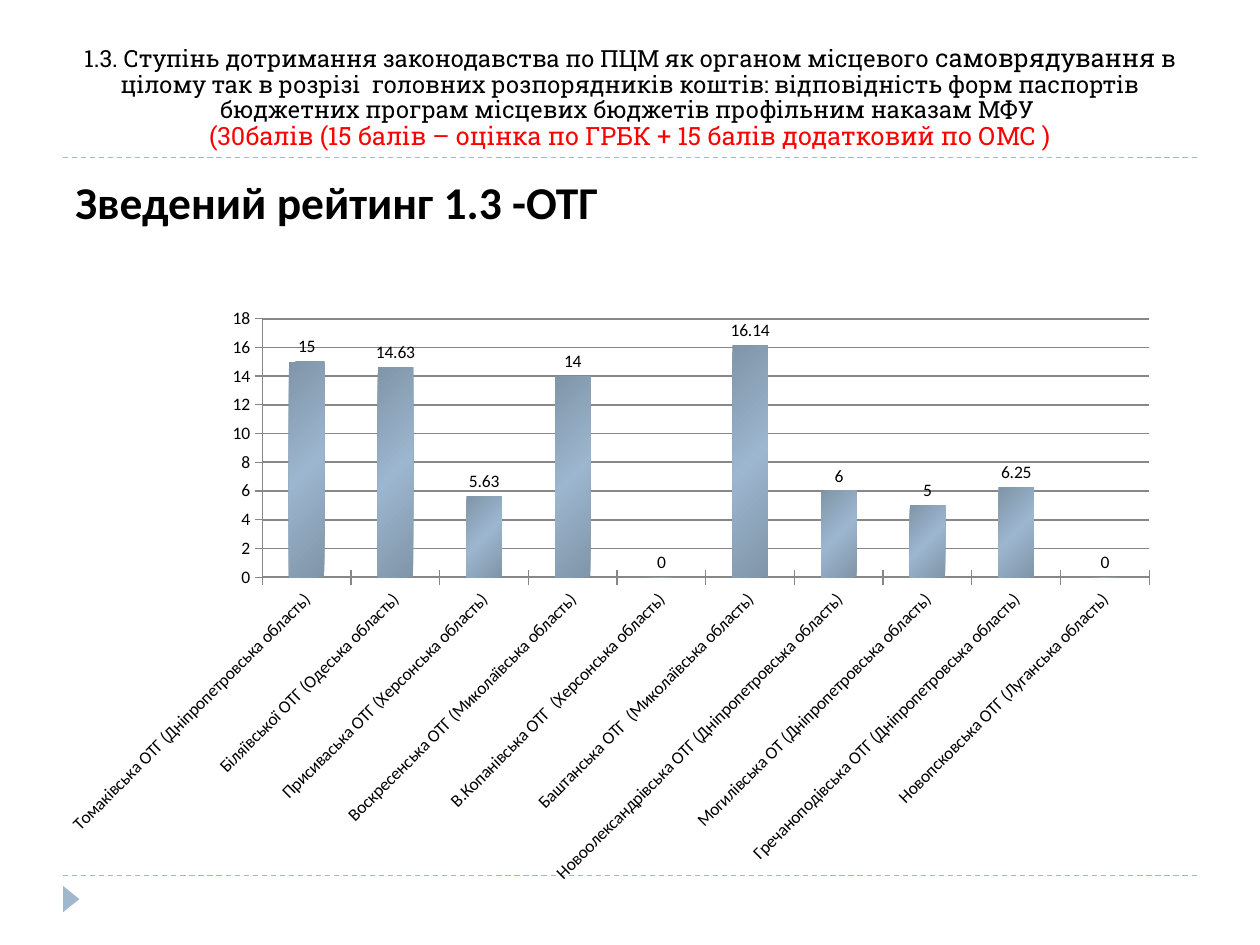
import copy

import lxml.etree
import pptx
import pptx.chart.data
import pptx.dml.color
import pptx.enum.chart
import pptx.enum.dml
import pptx.enum.shapes
import pptx.enum.text
import pptx.oxml
import pptx.oxml.ns
import pptx.util
from pptx.util import Cm

ACCENT, GREY, BLACK, RED = "9FB8CD", "878787", "000000", "FF0000"
BAR_STOPS = [(0, "8095A8"), (0.5, "9CB6CF"), (1, "8095A8")]
TITLE_RUNS = [
    ("1.3. Ступінь дотримання законодавства по ПЦМ як органом місцевого ", 13.5, BLACK),
    ("самоврядування", 14.4, BLACK),
    (" в цілому так в розрізі  головних розпорядників коштів: відповідність форм "
     "паспортів бюджетних програм місцевих бюджетів профільним наказам МФУ ", 13.5, BLACK),
]
TITLE_NOTE = ("(30балів (15 балів – оцінка по ГРБК + 15 балів додатковий по ОМС )", 14.4, RED)
RATINGS = [
    ("Томаківська ОТГ (Дніпропетровська область)", 15),
    ("Біляївської ОТГ (Одеська область)", 14.63),
    (" Присиваська ОТГ (Херсонська область)", 5.63),
    (" Воскресенська ОТГ (Миколаївська область)", 14),
    ("В.Копанівська ОТГ  (Херсонська область)", 0),
    ("Баштанська ОТГ  (Миколаївська область)", 16.14),
    ("Новоолександрівська ОТГ (Дніпропетровська область)", 6),
    ("Могилівська ОТ (Дніпропетровська область)", 5),
    ("Гречаноподівська ОТГ (Дніпропетровська область)", 6.25),
    ("Новопсковська ОТГ (Луганська область)", 0),
]


def color(value):
    """Return the RGB colour for a hex string."""
    return pptx.dml.color.RGBColor.from_string(value)


def format_font(font, name, size, value, bold=False):
    """Set the typeface, size, colour and weight of a font."""
    font.name, font.size, font.bold = name, pptx.util.Pt(size), bold
    font.color.rgb = color(value)


def format_line(line, value, width):
    """Set the colour and width of a line."""
    line.color.rgb = color(value)
    line.width = pptx.util.Pt(width)


def add_run(paragraph, text, name, size, value, bold=False):
    """Add one formatted run to a paragraph."""
    run = paragraph.add_run()
    run.text = text
    format_font(run.font, name, size, value, bold)


def add_rule(slide, top):
    """Add a dashed rule across the slide."""
    rule = slide.shapes.add_connector(
        pptx.enum.shapes.MSO_CONNECTOR.STRAIGHT, Cm(1.27), top, Cm(24.13), top)
    format_line(rule.line, ACCENT, 0.75)
    rule.line.dash_style = pptx.enum.dml.MSO_LINE.DASH
    properties = rule._element.spPr
    lxml.etree.SubElement(properties, pptx.oxml.ns.qn("a:effectLst"))


def add_marker(slide):
    """Add the triangle that points right at the foot."""
    marker = slide.shapes.add_shape(
        pptx.enum.shapes.MSO_SHAPE.ISOSCELES_TRIANGLE, Cm(1.17), Cm(17.96), Cm(0.53), Cm(0.33))
    marker.rotation = 90
    marker.shadow.inherit = False
    marker.fill.solid()
    marker.fill.fore_color.rgb = color(ACCENT)
    marker.line.fill.background()


def set_title(slide):
    """Place and fill the title placeholder."""
    title = slide.shapes.title
    title.left, title.top, title.width, title.height = Cm(1.27), Cm(0.43), Cm(22.86), Cm(2.74)
    frame = title.text_frame
    frame.word_wrap = True
    frame.auto_size = pptx.enum.text.MSO_AUTO_SIZE.NONE
    frame.vertical_anchor = pptx.enum.text.MSO_ANCHOR.BOTTOM
    paragraph = frame.paragraphs[0]
    paragraph.alignment = pptx.enum.text.PP_ALIGN.CENTER
    paragraph.line_spacing = 0.9
    for text, size, value in TITLE_RUNS:
        add_run(paragraph, text, "Roboto Slab", size, value)
    paragraph.add_line_break()
    text, size, value = TITLE_NOTE
    add_run(paragraph, text, "Roboto Slab", size, value)


def add_heading(slide):
    """Add the heading above the chart."""
    box = slide.shapes.add_textbox(Cm(1.27), Cm(3.38), Cm(22.86), Cm(13.72))
    box.text_frame.word_wrap = True
    paragraph = box.text_frame.paragraphs[0]
    paragraph.space_before = pptx.util.Pt(6)
    add_run(paragraph, "Зведений рейтинг 1.3 -ОТГ", "Calibri", 26, BLACK, True)


def fill_bars(series):
    """Give the bars a diagonal gradient with a light middle."""
    fill = series.format.fill
    fill.gradient()
    fill.gradient_angle = 315
    stop_list = series._element.find(".//" + pptx.oxml.ns.qn("a:gsLst"))
    stop_list.insert(1, copy.deepcopy(stop_list[0]))
    for stop, (position, value) in zip(fill.gradient_stops, BAR_STOPS):
        stop.position = position
        stop.color.rgb = color(value)


def set_plot_layout(chart, **fractions):
    """Fix the inner plot area as fractions of the chart."""
    entries = "".join(f'<c:{key}Mode val="edge"/>' for key in "xy")
    entries += "".join(f'<c:{key} val="{value}"/>' for key, value in fractions.items())
    layout = pptx.oxml.parse_xml(
        f'<c:layout {pptx.oxml.ns.nsdecls("c")}><c:manualLayout>'
        f'<c:layoutTarget val="inner"/>{entries}</c:manualLayout></c:layout>')
    plot_area = chart._chartSpace.chart.plotArea
    for old in plot_area.findall(pptx.oxml.ns.qn("c:layout")):
        plot_area.remove(old)
    plot_area.insert(0, layout)


def format_axes(chart):
    """Format both axes, the gridlines and the slanted category names."""
    for axis in (chart.category_axis, chart.value_axis):
        axis.major_tick_mark = pptx.enum.chart.XL_TICK_MARK.CROSS
        format_line(axis.format.line, GREY, 0.75)
        format_font(axis.tick_labels.font, "Calibri", 10, BLACK)
    scale = chart.value_axis
    scale.minimum_scale, scale.maximum_scale, scale.major_unit = 0, 18, 2
    format_line(scale.major_gridlines.format.line, GREY, 1)
    body = chart.category_axis._element.find(".//" + pptx.oxml.ns.qn("a:bodyPr"))
    body.set("rot", "-2700000")
    body.set("vert", "horz")


def add_rating_chart(slide):
    """Add the column chart of community ratings."""
    data = pptx.chart.data.CategoryChartData()
    names, values = zip(*RATINGS)
    data.categories = names
    data.add_series("Series 1", values)
    chart = slide.shapes.add_chart(
        pptx.enum.chart.XL_CHART_TYPE.COLUMN_CLUSTERED,
        Cm(0.99), Cm(5.94), Cm(22.63), Cm(12.12), data).chart
    chart.has_legend = chart.has_title = False
    format_font(chart.font, "Calibri", 10, BLACK)
    plot = chart.plots[0]
    plot.vary_by_categories = False
    plot.gap_width = 150
    fill_bars(plot.series[0])
    plot.has_data_labels = True
    labels = plot.data_labels
    labels.show_value = True
    labels.position = pptx.enum.chart.XL_LABEL_POSITION.OUTSIDE_END
    format_font(labels.font, "Calibri", 10, BLACK)
    format_axes(chart)
    set_plot_layout(chart, x=0.19, y=0.04, w=0.79, h=0.43)


def main():
    """Build and save the slide."""
    presentation = pptx.Presentation()
    presentation.slide_width, presentation.slide_height = Cm(25.4), Cm(19.05)
    slide = presentation.slides.add_slide(presentation.slide_layouts[5])
    for top in (Cm(17.65), Cm(3.18)):
        add_rule(slide, top)
    add_marker(slide)
    set_title(slide)
    add_heading(slide)
    add_rating_chart(slide)
    presentation.save("out.pptx")


if __name__ == "__main__":
    main()
